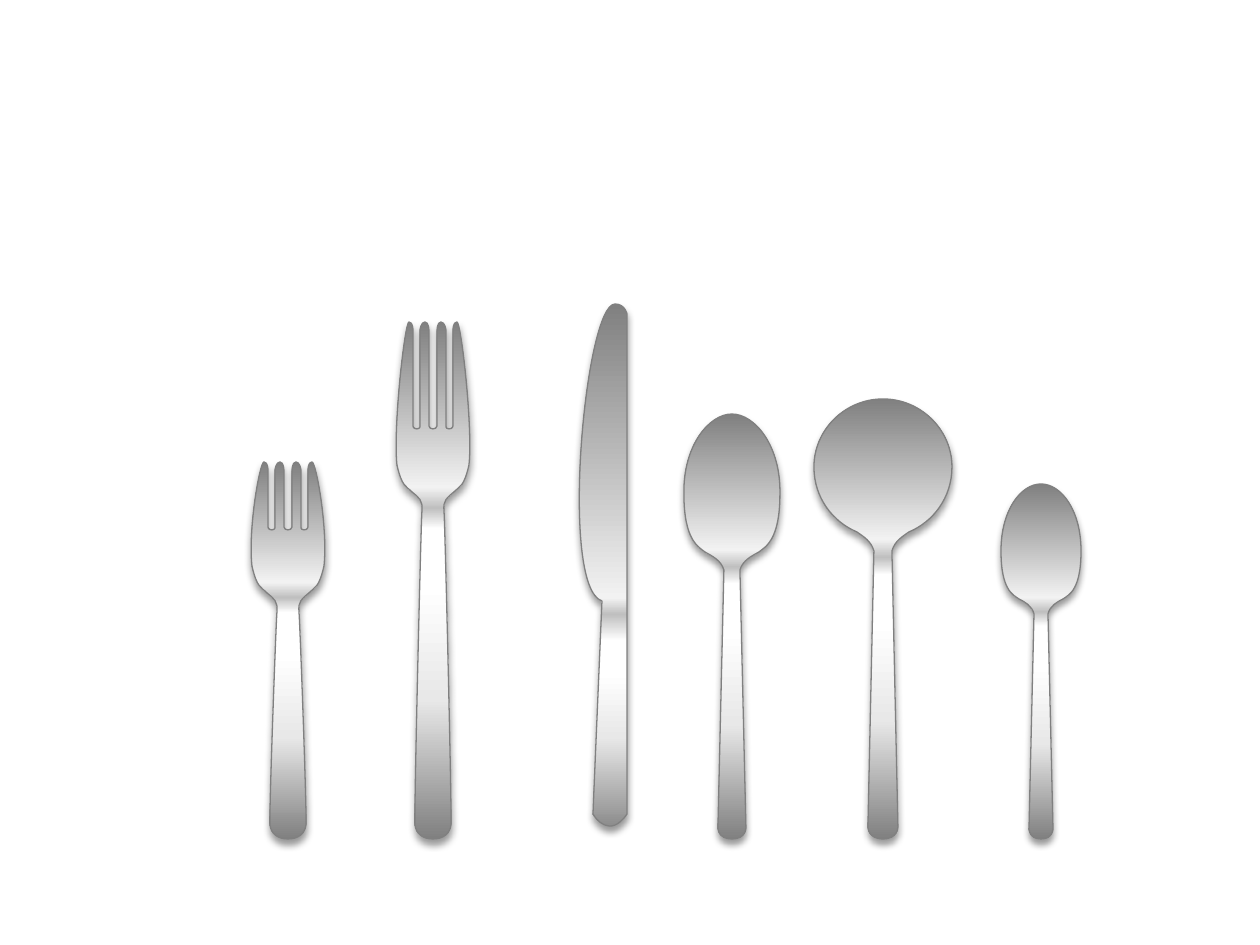
from lxml.etree import SubElement as add_child
from pptx import Presentation
from pptx.dml.color import RGBColor as Color
from pptx.oxml.ns import qn
from pptx.util import Pt

PX = 914400 / 126  # EMU in one px
HANDLE_END = 839

THEME = {
    "edge": "808080",
    "edge_width": 0.75,
    # gradient stops: colour and position in percent
    "sheen": ["808080", "F2F2F2", "BFBFBF", "FFFFFF", "FFFFFF", "E8E8E8", "808080"],
    "handled": [0, 32, 36, 40, 51, 73, 100],
    "bladed": [0, 55, 58, 63, 69, 81, 100],
    "shadow": {"blurRad": Pt(4), "dist": Pt(3), "dir": 90 * 60000, "algn": "t", "rotWithShape": 0},
    "shadow_colour": "000000",
    "shadow_opacity": 40,
}


def draw(page, segments, positions):
    """Draw a metal outline of a start point, lines (1 point) and cubic curves (3 points)."""
    points = [(round(x * PX), round(y * PX)) for segment in segments for x, y in segment]
    builder = page.shapes.build_freeform(*points[0], scale=1.0)
    builder.add_line_segments(points[1:], close=True)
    shape = builder.convert_to_shape()
    properties = shape._element.spPr

    # Join each group of three points into one curve
    lines = iter(list(properties.iter(qn("a:lnTo"))))
    for segment in segments[1:]:
        first, *others = [next(lines) for _ in segment]
        if others:
            curve = first.makeelement(qn("a:cubicBezTo"))
            first.addprevious(curve)
            for line in (first, *others):
                curve.append(line[0])
                line.getparent().remove(line)

    shape.line.color.rgb = Color.from_string(THEME["edge"])
    shape.line.width = Pt(THEME["edge_width"])
    shape.fill.gradient()
    shape.fill.gradient_angle = 270
    stops = properties.find(qn("a:gradFill")).find(qn("a:gsLst"))
    for old in list(stops):
        stops.remove(old)
    for colour, position in zip(THEME["sheen"], positions):
        stop = add_child(stops, qn("a:gs"), pos=str(position * 1000))
        add_child(stop, qn("a:srgbClr"), val=colour)

    shape.shadow.inherit = False
    shadow = add_child(properties.find(qn("a:effectLst")), qn("a:outerShdw"))
    for name, value in THEME["shadow"].items():
        shadow.set(name, str(value))
    tint = add_child(shadow, qn("a:srgbClr"), val=THEME["shadow_colour"])
    add_child(tint, qn("a:alpha"), val=str(THEME["shadow_opacity"] * 1000))


deck = Presentation()
deck.slide_width, deck.slide_height = round(1260 * PX), round(945 * PX)
page = deck.slides.add_slide(deck.slide_layouts[6])

# Right halves, as (distance from the axis, y), from the top of the axis down
halves = []

# Dinner and salad fork: same head and handle, different tines
for axis, tip, slot in ((433, 322, 429), (288, 462, 530)):
    halves.append((axis, [
        [(0, slot)],
        [(2, slot), (4, slot - 1), (4, slot - 3)],
        [(4, tip + 9)],
        [(4, tip + 9), (4, tip), (8, tip)],
        [(12, tip), (13, tip + 8), (13, tip + 8)],
        [(13, slot - 4)],
        [(13, slot - 4), (12, slot), (16, slot)],
        [(20, slot), (20, slot - 3), (20, slot - 3)],
        [(20, tip + 8)],
        [(20, tip + 8), (20, tip), (24, tip)],
        [(28, tip), (40, slot - 2), (36, slot + 36)],
        [(31, slot + 58), (27, slot + 57), (21, slot + 63)],
        [(14, slot + 69), (10, slot + 71), (11, slot + 82)],
        [(12, slot + 93), (19, 816), (18, 825)],
        [(17, 833), (11, HANDLE_END), (0, HANDLE_END)],
    ]))

# Dessert, soup and tea spoon: bowl curves, then half width and y of the handle's end
for axis, top, bowl, end in (
    (732, 414, [[(23, 414), (49, 446), (48, 494)],
                [(48, 541), (33, 547), (27, 552)],
                [(20, 556), (11, 560), (8, 570)]], (14, 828)),
    (883, 399, [[(38, 399), (69, 430), (69, 467)],
                [(69, 498), (50, 522), (26, 532)],
                [(19, 537), (12, 541), (9, 551)]], (15, 827)),
    (1041, 484, [[(20, 484), (40, 510), (40, 551)],
                 [(40, 590), (28, 595), (22, 599)],
                 [(16, 602), (9, 606), (7, 614)]], (12, 829)),
):
    rounding = [end, (end[0], HANDLE_END), (0, HANDLE_END)]
    halves.append((axis, [[(0, top)], *bowl, [end], rounding]))

# Mirror each half about its axis, walking back up from the handle's end
outlines = []
for axis, half in halves:
    right = [[(axis + x, y) for x, y in segment] for segment in half]
    way_back = iter([(axis - x, y) for segment in half for x, y in segment][-2::-1])
    left = [[next(way_back) for _ in segment] for segment in half[:0:-1]]
    outlines.append((right + left, THEME["handled"]))

# Knife, between the forks and the spoons
knife = [
    [(602, 601)],
    [(602, 601), (593, 811), (593, 814)],
    [(595, 818), (610, 839), (627, 814)],
    [(627, 314)],
    [(627, 314), (625, 304), (615, 304)],
    [(585, 304), (559, 587), (602, 601)],
]
outlines.insert(2, (knife, THEME["bladed"]))

for segments, positions in outlines:
    draw(page, segments, positions)

deck.save("out.pptx")
